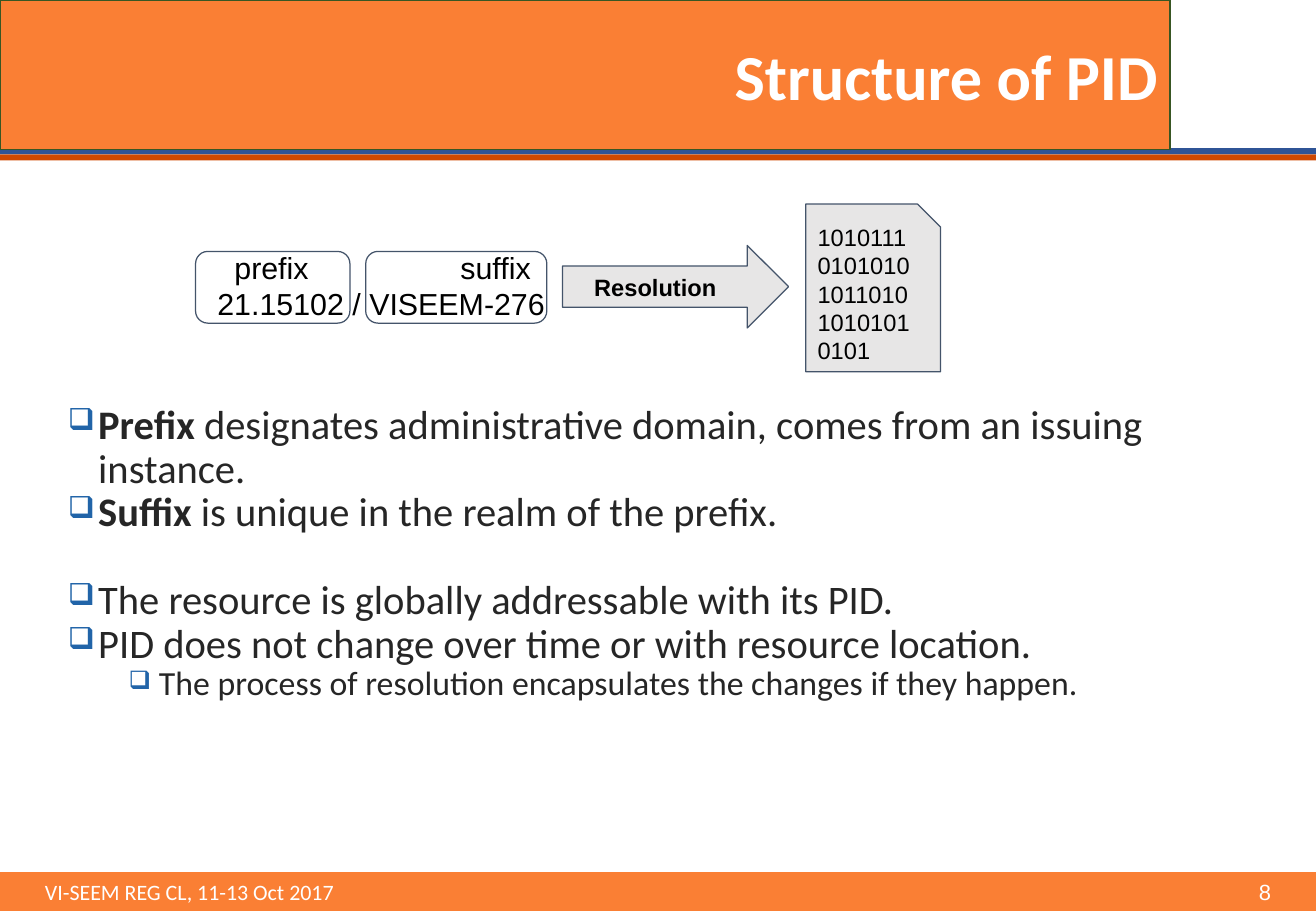
from lxml import etree
from pptx import Presentation
from pptx.dml.color import RGBColor
from pptx.enum import shapes, text
from pptx.oxml.ns import qn
from pptx.util import Inches, Pt

ORANGE = RGBColor(0xFA, 0x7F, 0x34)
RUST = RGBColor(0xCF, 0x49, 0x01)
BLUE = RGBColor(0x2F, 0x54, 0x96)
GREEN = RGBColor(0x38, 0x56, 0x23)
SLATE = RGBColor(0x44, 0x54, 0x6A)
GREY = RGBColor(0xE7, 0xE6, 0xE6)
INK = RGBColor(0x26, 0x26, 0x26)
BULLET = RGBColor(0x21, 0x64, 0xA8)
BLACK = RGBColor(0, 0, 0)
WHITE = RGBColor(0xFF, 0xFF, 0xFF)
SHAPE = shapes.MSO_SHAPE
ALIGN = text.PP_ALIGN
MIDDLE = text.MSO_ANCHOR.MIDDLE
WIDTH = 10.83

POINTS = [
    (0, 0, [("Prefix", True), (" designates administrative domain, comes from an issuing instance.", False)]),
    (0, 0, [("Suffix", True), (" is unique in the realm of the prefix.", False)]),
    (0, 26, [("The resource is globally addressable with its PID.", False)]),
    (0, 0, [("PID does not change over time or with resource location.", False)]),
    (1, 0, [("The process of resolution encapsulates the changes if they happen.", False)]),
]


def add_shape(s, kind, box, fill=None, line=None, adj=None):
    sp = s.shapes.add_shape(kind, *map(Inches, box))
    sp.shadow.inherit = False
    if fill is None:
        sp.fill.background()
    else:
        sp.fill.solid()
        sp.fill.fore_color.rgb = fill
    if line is None:
        sp.line.fill.background()
    else:
        sp.line.color.rgb = line
        sp.line.width = Pt(0.75)
    if adj is not None:
        sp.adjustments[0] = adj
    return sp


def set_frame(sp, margins, anchor=text.MSO_ANCHOR.TOP):
    tf = sp.text_frame
    tf.word_wrap = True
    tf.vertical_anchor = anchor
    tf.margin_left, tf.margin_top, tf.margin_right, tf.margin_bottom = map(Inches, margins)
    return tf


def add_run(p, words, size, color, font="Calibri", bold=False):
    r = p.add_run()
    r.text = words
    r.font.size = Pt(size)
    r.font.name = font
    r.font.bold = bold
    r.font.color.rgb = color


def add_paragraph(tf, first, align=ALIGN.LEFT):
    p = tf.paragraphs[0] if first else tf.add_paragraph()
    p.alignment = align
    return p


def set_tabs(p, *stops):
    tabs = etree.SubElement(p._p.get_or_add_pPr(), qn("a:tabLst"))
    for position, align in stops:
        etree.SubElement(tabs, qn("a:tab"), pos=str(Inches(position)), algn=align)


def set_bullet(p, level):
    pPr = p._p.get_or_add_pPr()
    pPr.set("marL", str(Inches(0.5 * (level + 1))))
    pPr.set("indent", str(Inches(-0.25)))
    color = etree.SubElement(pPr, qn("a:buClr"))
    etree.SubElement(color, qn("a:srgbClr"), val=str(BULLET))
    etree.SubElement(pPr, qn("a:buSzPct"), val="75000")
    etree.SubElement(pPr, qn("a:buChar"), char="❑")


def add_header(s):
    for top, color in ((1.27, RUST), (1.22, BLUE)):
        add_shape(s, SHAPE.RECTANGLE, (0, top, WIDTH, 0.05), color)
    title = add_shape(s, SHAPE.RECTANGLE, (0, 0, 9.63, 1.23), ORANGE, GREEN)
    tf = set_frame(title, (0.1, 0.05, 0.1, 0.05), MIDDLE)
    add_run(add_paragraph(tf, True, ALIGN.RIGHT), "Structure of PID", 38, WHITE, bold=True)


def add_points(s):
    body = s.shapes.add_textbox(*map(Inches, (0.21, 3.28, 10.41, 3.91)))
    tf = set_frame(body, (0.1, 0.05, 0.1, 0.05))
    for i, (level, before, runs) in enumerate(POINTS):
        p = add_paragraph(tf, i == 0)
        p.level = level
        set_bullet(p, level)
        p.line_spacing = 0.9
        p.space_before = Pt(before)
        for words, bold in runs:
            add_run(p, words, 20 if level else 24, INK, bold=bold)


def add_footer(s):
    bar = add_shape(s, SHAPE.RECTANGLE, (0, 7.18, WIDTH, 0.32), ORANGE)
    tf = set_frame(bar, (0.37, 0.05, 0.3, 0.05), MIDDLE)
    p = add_paragraph(tf, True)
    set_tabs(p, (10.09, "r"))
    add_run(p, "VI-SEEM REG CL, 11-13 Oct 2017\t", 13, WHITE)
    add_run(p, "8", 13, WHITE, "Arial")


def add_diagram(s):
    pid = s.shapes.add_textbox(*map(Inches, (1.69, 1.95, 8.69, 1.01)))
    tf = set_frame(pid, (0.1, 0.1, 0.1, 0.1))
    p = add_paragraph(tf, True)
    set_tabs(p, (0.14, "l"), (2, "l"))
    add_run(p, "\tprefix\tsuffix", 18, BLACK, "Arial")
    add_run(add_paragraph(tf, False), "21.15102 / VISEEM-276", 18, BLACK, "Arial")

    for left, width in ((1.61, 1.27), (3.01, 1.49)):
        add_shape(s, SHAPE.ROUNDED_RECTANGLE, (left, 2.07, width, 0.59), line=SLATE, adj=0.17)

    arrow = add_shape(s, SHAPE.RIGHT_ARROW, (4.63, 2.02, 1.86, 0.68), GREY, SLATE, 0.5)
    tf = set_frame(arrow, (0.26, 0.1, 0.1, 0.1), MIDDLE)
    add_run(add_paragraph(tf, True), "Resolution", 14, BLACK, "Arial", True)

    resource = add_shape(s, SHAPE.SNIP_1_RECTANGLE, (6.63, 1.68, 1.11, 1.38), GREY, SLATE, 0.17)
    tf = set_frame(resource, (0.1, 0.1, 0.1, 0.1), MIDDLE)
    add_run(add_paragraph(tf, True), "10101110101010101101010101010101", 14, BLACK, "Arial")


def main():
    prs = Presentation()
    prs.slide_width, prs.slide_height = Inches(WIDTH), Inches(7.5)
    s = prs.slides.add_slide(prs.slide_layouts[6])
    add_header(s)
    add_points(s)
    add_footer(s)
    add_diagram(s)
    prs.save("out.pptx")


if __name__ == "__main__":
    main()
